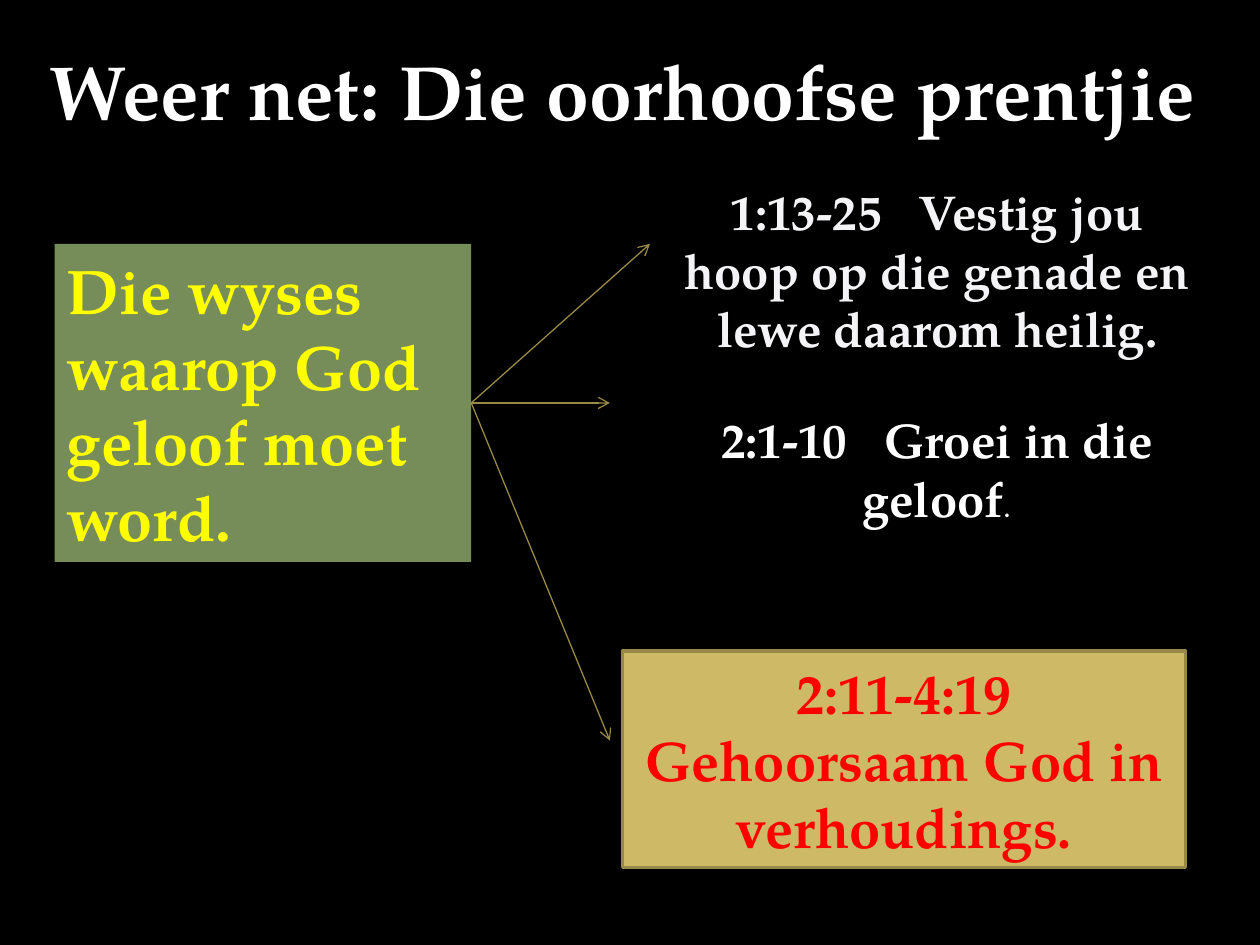
from dataclasses import dataclass

from lxml import etree
from pptx import Presentation
from pptx.dml.color import RGBColor
from pptx.enum.shapes import MSO_CONNECTOR, MSO_SHAPE
from pptx.enum.text import MSO_ANCHOR, PP_ALIGN
from pptx.oxml.ns import qn
from pptx.util import Pt

RECTANGLE = MSO_SHAPE.RECTANGLE
STRAIGHT = MSO_CONNECTOR.STRAIGHT
TOP = MSO_ANCHOR.TOP
MIDDLE = MSO_ANCHOR.MIDDLE
LEFT = PP_ALIGN.LEFT
CENTER = PP_ALIGN.CENTER
RIGHT_SIDE = 3
TITLE_ONLY = 5


@dataclass(frozen=True)
class Theme:
    """Colours, font and type sizes of the slide."""
    font: str = "TeX Gyre Pagella"
    background: str = "000000"
    white: str = "FFFFFF"
    soft_white: str = "F4F3F6"
    yellow: str = "FFFF00"
    red: str = "FF0000"
    green: str = "768D5A"
    gold: str = "CEB966"
    gold_edge: str = "98894B"
    arrow: str = "998946"
    title_size: int = 44
    theme_size: int = 36
    focus_size: int = 32
    passage_size: int = 28
    stop_size: int = 18
    edge_width: float = 2
    arrow_width: float = 0.75


THEME = Theme()


def rgb(code):
    """Return the colour for a hexadecimal code."""
    return RGBColor.from_string(code)


def points(box):
    """Turn a sequence of numbers into lengths in points."""
    return [Pt(value) for value in box]


def format_run(run, size, color, bold=True):
    """Give a run its font, size, colour and weight."""
    run.font.name = THEME.font
    run.font.size = Pt(size)
    run.font.bold = bold
    run.font.color.rgb = rgb(color)


def write(frame, text, size, color, align=CENTER, anchor=TOP):
    """Write one wrapped paragraph and return it."""
    frame.text = text
    frame.word_wrap = True
    frame.vertical_anchor = anchor
    paragraph = frame.paragraphs[0]
    paragraph.alignment = align
    format_run(paragraph.runs[0], size, color)
    return paragraph


def place_title(slide, box, text):
    """Move the title placeholder to its box and fill it."""
    title = slide.shapes.title
    title.left, title.top, title.width, title.height = points(box)
    write(title.text_frame, text, THEME.title_size, THEME.white)


def add_panel(slide, box, text, size, color, fill, align=CENTER, edge=None):
    """Add a filled rectangle with text, outlined when an edge is given."""
    panel = slide.shapes.add_shape(RECTANGLE, *points(box))
    panel.shadow.inherit = False
    panel.fill.solid()
    panel.fill.fore_color.rgb = rgb(fill)
    if edge:
        panel.line.color.rgb = rgb(edge)
        panel.line.width = Pt(THEME.edge_width)
    else:
        panel.line.fill.background()
    write(panel.text_frame, text, size, color, align, MIDDLE)
    return panel


def add_passage(slide, box, text, color):
    """Add a centred passage without a fill and return its paragraph."""
    passage = slide.shapes.add_textbox(*points(box))
    return write(passage.text_frame, text, THEME.passage_size, color)


def add_arrow(slide, source, end):
    """Draw an arrow from the right side of a panel to a point."""
    arrow = slide.shapes.add_connector(STRAIGHT, 0, 0, *points(end))
    arrow.begin_connect(source, RIGHT_SIDE)
    arrow.line.color.rgb = rgb(THEME.arrow)
    arrow.line.width = Pt(THEME.arrow_width)
    etree.SubElement(arrow.line._get_or_add_ln(), qn("a:tailEnd"), type="arrow")
    etree.SubElement(arrow._element.spPr, qn("a:effectLst"))


def build_overview(slide):
    """Lay out the title, the theme panel, its passages and the arrows."""
    slide.background.fill.solid()
    slide.background.fill.fore_color.rgb = rgb(THEME.background)
    place_title(slide, (0, 21, 711.4, 60.5), "Weer net: Die oorhoofse prentjie")

    faith = add_panel(
        slide, (31.2, 139.4, 238.1, 181.7),
        "Die wyses waarop God geloof moet word.",
        THEME.theme_size, THEME.yellow, THEME.green, LEFT)

    passage_left, passage_width = 382.5, 306
    add_passage(
        slide, (passage_left, 100, passage_width, 108.7),
        "1:13-25   Vestig jou hoop op die genade en lewe daarom heilig.",
        THEME.soft_white)
    growth = add_passage(
        slide, (passage_left, 230.4, passage_width, 75),
        "2:1-10   Groei in die geloof", THEME.white)
    stop = growth.add_run()
    stop.text = "."
    format_run(stop, THEME.stop_size, THEME.white, bold=False)

    add_panel(
        slide, (355.7, 372, 321.8, 123.8),
        "2:11-4:19 Gehoorsaam God in verhoudings.",
        THEME.focus_size, THEME.red, THEME.gold, edge=THEME.gold_edge)

    for end in ((371.4, 139.4), (348.5, 230.25), (348.5, 423.2)):
        add_arrow(slide, faith, end)


def main():
    """Build the presentation and save it."""
    presentation = Presentation()
    presentation.slide_width, presentation.slide_height = Pt(720), Pt(540)
    build_overview(presentation.slides.add_slide(
        presentation.slide_layouts[TITLE_ONLY]))
    presentation.save("out.pptx")


if __name__ == "__main__":
    main()
